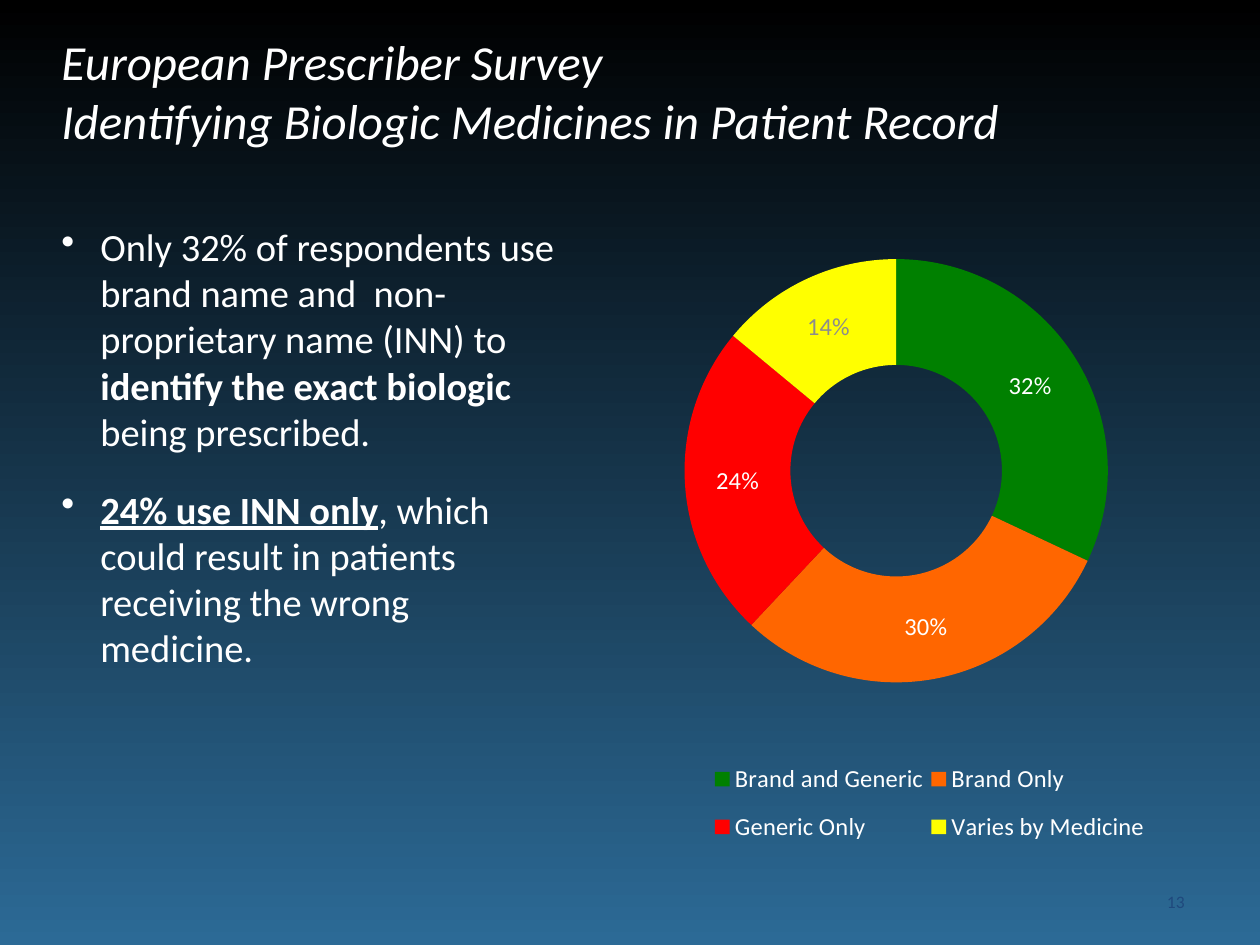
import pptx
import pptx.util
import pptx.chart.data
import pptx.dml.color
import pptx.enum.chart
import pptx.enum.text
import pptx.oxml

PX_PER_INCH = 126
WHITE = "FFFFFF"


def px(length):
    return pptx.util.Inches(length / PX_PER_INCH)


def style(font, color, **values):
    font.color.rgb = pptx.dml.color.RGBColor.from_string(color)
    for name, value in {"name": "Calibri", **values}.items():
        setattr(font, name, value)


deck = pptx.Presentation()
deck.slide_width, deck.slide_height = px(1260), px(945)
page = deck.slides.add_slide(deck.slide_layouts[6])
background = page.background.fill
background.gradient()
background.gradient_angle = 90
for stop, color in zip(background.gradient_stops, ["2C6A96", "000000"]):
    stop.color.rgb = pptx.dml.color.RGBColor.from_string(color)

title = [[("European Prescriber Survey", {})],
         [("Identifying Biologic Medicines in Patient Record", {})]]
findings = [
    [("Only 32% of respondents use brand name and  non-proprietary name (INN) to ", {}),
     ("identify the exact biologic ", {"bold": True}),
     ("being prescribed.", {})],
    [("24% use INN only", {"bold": True, "underline": True}),
     (", which could result in patients receiving the wrong medicine.", {})],
]
middle = pptx.enum.text.MSO_ANCHOR.MIDDLE
top = pptx.enum.text.MSO_ANCHOR.TOP
left = pptx.enum.text.PP_ALIGN.LEFT
right = pptx.enum.text.PP_ALIGN.RIGHT
texts = [
    ((49, 35, 1126, 110), title, middle, left, WHITE, {"size": pptx.util.Pt(28), "italic": True}),
    ((49, 217, 519, 543), findings, top, left, WHITE, {"size": pptx.util.Pt(22)}),
    ((1097, 882, 100, 40), [[("13", {})]], middle, right, "1F497D", {"size": pptx.util.Pt(10)}),
]
for place, paragraphs, anchor, alignment, color, values in texts:
    box = page.shapes.add_textbox(*map(px, place))
    frame = box.text_frame
    frame.word_wrap = True
    frame.vertical_anchor = anchor
    for index, spans in enumerate(paragraphs):
        para = frame.add_paragraph() if index else frame.paragraphs[0]
        para.alignment = alignment
        for text, emphasis in spans:
            span = para.add_run()
            span.text = text
            style(span.font, color, **values, **emphasis)
        if paragraphs is findings:
            para.space_before = pptx.util.Pt(18)
            properties = para._p.get_or_add_pPr()
            properties.set("marL", str(px(39)))
            properties.set("indent", str(px(-39)))
            properties.append(pptx.oxml.parse_xml(
                '<a:buChar xmlns:a="http://schemas.openxmlformats.org/drawingml/2006/main" char="•"/>'))

slices = [
    ("Brand and Generic", 0.32, "008000", WHITE),
    ("Brand Only", 0.30, "FF6600", WHITE),
    ("Generic Only", 0.24, "FF0000", WHITE),
    ("Varies by Medicine", 0.14, "FFFF00", "8C8C8C"),
]
data = pptx.chart.data.CategoryChartData(number_format="0%")
data.categories = [name for name, *_ in slices]
data.add_series("Series 1", [value for _, value, *_ in slices])
chart = page.shapes.add_chart(
    pptx.enum.chart.XL_CHART_TYPE.DOUGHNUT, *map(px, (640, 188, 557, 707)), data).chart
chart.has_title = False
style(chart.font, "000000", size=pptx.util.Pt(10))
chart.plots[0].vary_by_categories = True
for index, (_, _, color, label_color) in enumerate(slices):
    point = chart.plots[0].series[0].points[index]
    point.format.fill.solid()
    point.format.fill.fore_color.rgb = pptx.dml.color.RGBColor.from_string(color)
    point.format.line.fill.background()
    style(point.data_label.font, label_color, size=pptx.util.Pt(14))

chart.has_legend = True
legend = chart.legend
legend.position = pptx.enum.chart.XL_LEGEND_POSITION.RIGHT
legend.include_in_layout = False
style(legend.font, WHITE, size=pptx.util.Pt(14))

plot_area = chart._chartSpace.chart.plotArea
layouts = [
    (plot_area, 0, '<c:layoutTarget val="inner"/>', (0.08, 0.1, 0.76, 0.6)),
    (legend._element, 1, "", (0.12, 0.79, 0.8, 0.16)),
]
for element, position, target, bounds in layouts:
    for old in element.findall("{*}layout"):
        element.remove(old)
    modes = '<c:xMode val="edge"/><c:yMode val="edge"/>'
    sizes = "".join(f'<c:{name} val="{value}"/>' for name, value in zip("xywh", bounds))
    element.insert(position, pptx.oxml.parse_xml(
        '<c:layout xmlns:c="http://schemas.openxmlformats.org/drawingml/2006/chart">'
        f"<c:manualLayout>{target}{modes}{sizes}</c:manualLayout></c:layout>"))

deck.save("out.pptx")
